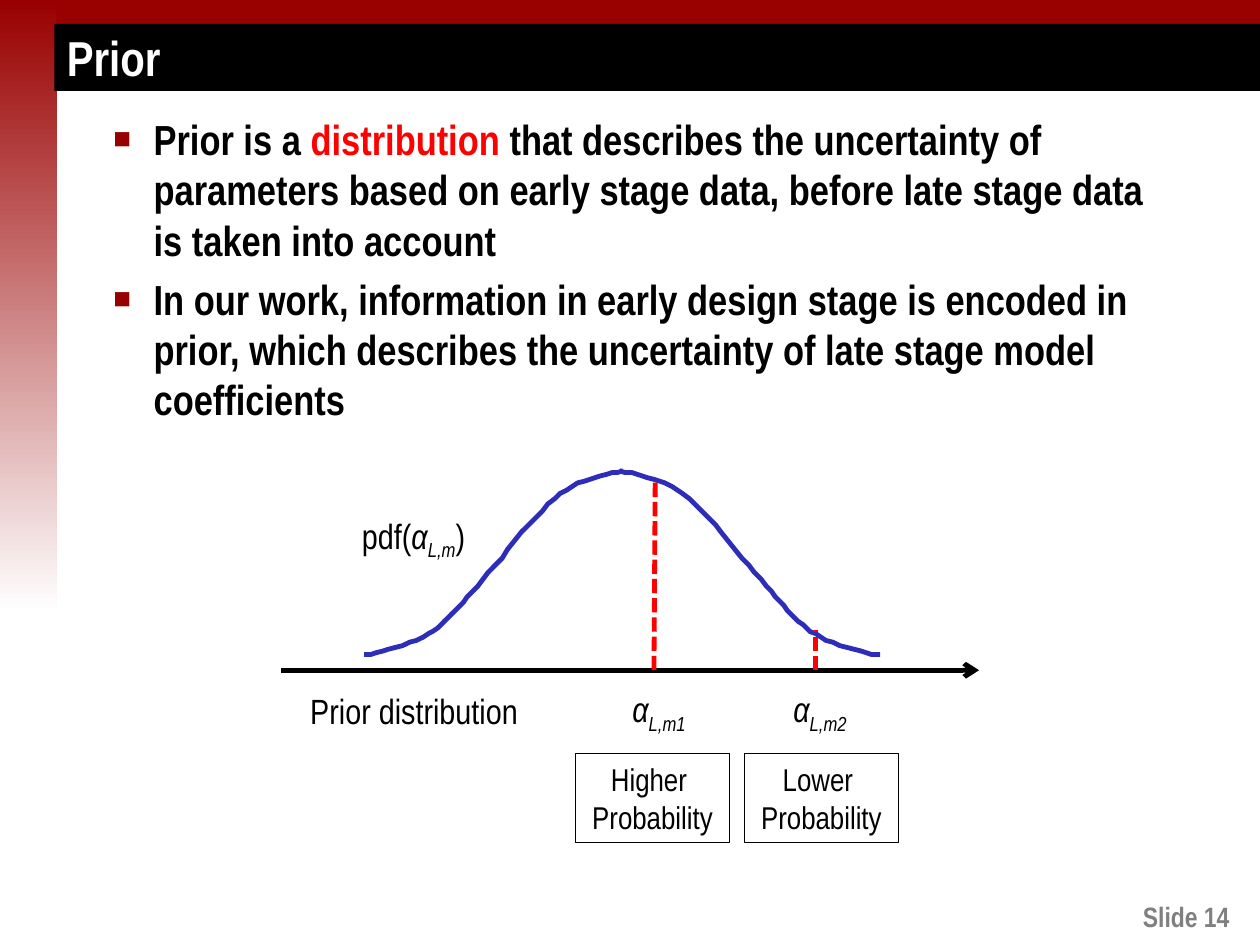
from lxml import etree
from pptx import Presentation
from pptx.dml.color import RGBColor
from pptx.enum import dml, shapes, text
from pptx.oxml import ns
from pptx.util import Pt

DARK_RED = RGBColor(0x99, 0x00, 0x00)
RED = RGBColor(0xFF, 0x00, 0x00)
BLUE = RGBColor(0x2D, 0x2D, 0xB9)
BLACK = RGBColor(0x00, 0x00, 0x00)
WHITE = RGBColor(0xFF, 0xFF, 0xFF)
GRAY = RGBColor(0x80, 0x80, 0x80)
LEFT, CENTER, RIGHT = text.PP_ALIGN.LEFT, text.PP_ALIGN.CENTER, text.PP_ALIGN.RIGHT


class SlideBuilder:
    font = "Arial Narrow"
    stroke = Pt(2.75)

    def __init__(self, slide):
        self.slide = slide

    def format_run(self, run, size, color=BLACK, bold=False, italic=False, subscript=False):
        font = run.font
        font.name, font.size, font.bold, font.italic = self.font, Pt(size), bold, italic
        font.color.rgb = color
        if subscript:
            run._r.get_or_add_rPr().set("baseline", "-25000")

    def add_runs(self, paragraph, pieces, size, align=LEFT, **style):
        paragraph.alignment = align
        for words, extra in pieces:
            run = paragraph.add_run()
            run.text = words
            self.format_run(run, size, **{**style, **extra})

    def placeholder(self, index, left, top, width, height):
        holder = self.slide.placeholders[index]
        self.slide.shapes.element.append(holder.element)
        holder.left, holder.top = Pt(left), Pt(top)
        holder.width, holder.height = Pt(width), Pt(height)
        holder.text_frame.auto_size = text.MSO_AUTO_SIZE.NONE
        return holder

    def title(self, words, *box):
        holder = self.placeholder(0, *box)
        holder.fill.solid()
        holder.fill.fore_color.rgb = BLACK
        frame = holder.text_frame
        frame.vertical_anchor = text.MSO_ANCHOR.MIDDLE
        self.add_runs(frame.paragraphs[0], [(words, {})], 28, color=WHITE, bold=True)

    def bullets(self, items, *box):
        frame = self.placeholder(1, *box).text_frame
        frame.vertical_anchor = text.MSO_ANCHOR.TOP
        for number, pieces in enumerate(items):
            paragraph = frame.add_paragraph() if number else frame.paragraphs[0]
            self.add_runs(paragraph, pieces, 24, bold=True)
            paragraph.space_before = Pt(4.8)
            props = paragraph._p.get_or_add_pPr()
            props.set("marL", str(Pt(23)))
            props.set("indent", str(-Pt(23)))
            bullet_color = etree.SubElement(props, ns.qn("a:buClr"))
            etree.SubElement(bullet_color, ns.qn("a:srgbClr"), val=str(DARK_RED))
            etree.SubElement(props, ns.qn("a:buSzPct"), val="70000")
            etree.SubElement(props, ns.qn("a:buChar"), char="■")

    def rectangle(self, left, top, width, height):
        shape = self.slide.shapes.add_shape(
            shapes.MSO_SHAPE.RECTANGLE, Pt(left), Pt(top), Pt(width), Pt(height))
        shape.shadow.inherit = False
        return shape

    def band(self, *box, fade_to=None):
        shape = self.rectangle(*box)
        shape.line.fill.background()
        if fade_to is None:
            shape.fill.solid()
            shape.fill.fore_color.rgb = DARK_RED
        else:
            shape.fill.gradient()
            shape.fill.gradient_angle = 270
            for stop, color in zip(shape.fill.gradient_stops, (DARK_RED, fade_to)):
                stop.color.rgb = color

    def outlined_box(self, lines, *box):
        shape = self.rectangle(*box)
        shape.fill.background()
        shape.line.color.rgb = BLACK
        shape.line.width = Pt(0.75)
        frame = shape.text_frame
        frame.word_wrap = True
        frame.text = "\n".join(lines)
        for paragraph in frame.paragraphs:
            paragraph.alignment = CENTER
            self.format_run(paragraph.runs[0], 18)

    def label(self, pieces, left, top, width, height, size=20, wrap=False, inset=7.2, **style):
        label = self.slide.shapes.add_textbox(Pt(left), Pt(top), Pt(width), Pt(height))
        frame = label.text_frame
        frame.word_wrap = wrap
        frame.margin_right = Pt(inset)
        self.add_runs(frame.paragraphs[0], pieces, size, RIGHT, **style)

    def line(self, x1, y1, x2, y2, color, dashed=False, arrow=False):
        connector = self.slide.shapes.add_connector(
            shapes.MSO_CONNECTOR.STRAIGHT, Pt(x1), Pt(y1), Pt(x2), Pt(y2))
        connector.line.color.rgb = color
        connector.line.width = self.stroke
        if dashed:
            connector.line.dash_style = dml.MSO_LINE.SQUARE_DOT
        if arrow:
            etree.SubElement(connector.line._get_or_add_ln(), ns.qn("a:tailEnd"), type="arrow")
        etree.SubElement(connector._element.spPr, ns.qn("a:effectLst"))

    def curve(self, points):
        builder = self.slide.shapes.build_freeform(*points[0], scale=Pt(1))
        builder.add_line_segments(points[1:], close=False)
        shape = builder.convert_to_shape()
        shape.shadow.inherit = False
        shape.fill.background()
        shape.line.color.rgb = BLUE
        shape.line.width = self.stroke


def bezier_points(start, segments, steps=12):
    points = [start]
    for b, c, d in segments:
        a = points[-1]
        for step in range(1, steps + 1):
            t = step / steps
            s = 1 - t
            points.append(tuple(
                s**3 * p + 3 * s * s * t * q + 3 * s * t * t * r + t**3 * e
                for p, q, r, e in zip(a, b, c, d)))
    return points


def alpha(subscript):
    return [("α", {"italic": True}), (subscript, {"italic": True, "subscript": True})]


def main():
    deck = Presentation()
    deck.slide_width, deck.slide_height = Pt(720), Pt(540)
    page = SlideBuilder(deck.slides.add_slide(deck.slide_layouts[1]))

    page.band(0, 0, 720, 18)
    page.band(0, 0, 32.4, 350, fade_to=WHITE)
    page.label([("Slide 14", {})], 50.4, 510.5, 666.7, 26.6, size=16, wrap=True,
               inset=14.5, color=GRAY, bold=True)
    page.title("Prior", 31, 13.7, 689, 38.2)
    page.bullets([
        [("Prior is a ", {}), ("distribution", {"color": RED}),
         (" that describes the uncertainty of parameters based on early stage data, "
          "before late stage data is taken into account", {})],
        [("In our work, information in early design stage is encoded in prior, "
          "which describes the uncertainty of late stage model coefficients", {})],
    ], 57.6, 61.2, 622, 440)

    axis_y = 383
    page.line(160.5, axis_y, 559.5, axis_y, BLACK, arrow=True)
    page.label([("Prior distribution", {})], 157.7, 390.2, 145.4, 31.7, wrap=True)

    right_half = bezier_points((354.2, 269.3), [
        ((367.2, 271.4), (380.2, 273.6), (393.8, 285)),
        ((407.5, 295.9), (425.5, 321.8), (437.8, 334.8)),
        ((450, 347.8), (455, 355.7), (465.8, 362.2)),
        ((476.6, 369.4), (502.6, 374.4), (502.6, 374.4)),
    ])
    mirror_sum = 710.6
    page.curve(right_half)
    page.curve([(mirror_sum - x, y) for x, y in right_half])
    page.label([("pdf(", {}), *alpha("L,m"), (")", {})], 196.6, 290.2, 76.3, 31.7)

    samples = [
        ("L,m1", "Higher ", 373.7, 374.4, 275, 350, 329),
        ("L,m2", "Lower ", 465.8, 465.8, 360, 442, 425.5),
    ]
    for subscript, level, foot_x, top_x, top_y, label_x, box_x in samples:
        page.line(foot_x, axis_y, top_x, top_y, RED, dashed=True)
        page.label(alpha(subscript), label_x, 389.2, 49, 31.7)
        page.outlined_box([level, "Probability"], box_x, 430.6, 87.8, 51)

    deck.save("out.pptx")


if __name__ == "__main__":
    main()
